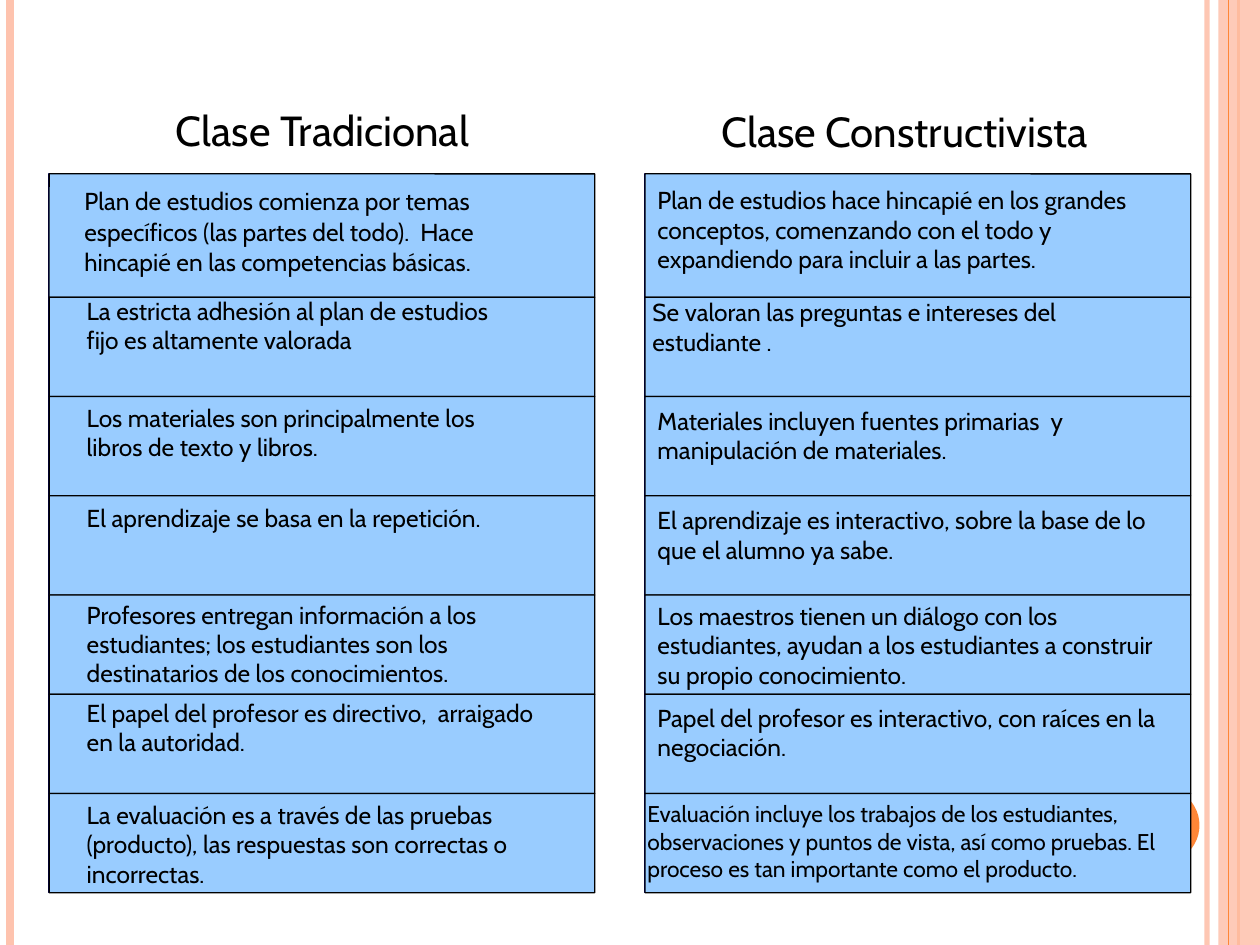
from lxml import etree
from pptx import Presentation
from pptx.dml.color import RGBColor
from pptx.enum.shapes import MSO_CONNECTOR, MSO_SHAPE
from pptx.enum.text import PP_ALIGN
from pptx.oxml.ns import qn
from pptx.util import Pt

LINE = MSO_CONNECTOR.STRAIGHT
RECT, ROUND, OVAL = MSO_SHAPE.RECTANGLE, MSO_SHAPE.ROUNDED_RECTANGLE, MSO_SHAPE.OVAL
CENTER, LEFT = PP_ALIGN.CENTER, PP_ALIGN.LEFT

BLACK = RGBColor(0x00, 0x00, 0x00)
NAVY = RGBColor(0x00, 0x00, 0x80)
SKY = RGBColor(0x99, 0xCC, 0xFF)
PEACH = RGBColor(0xFE, 0xC3, 0xAE)
ORANGE = RGBColor(0xFE, 0x86, 0x37)
FONT = "Cabin"

PX = 9144  # 100 px to the inch
WIDE, HIGH = 1000, 750
TOP, HEAD_H, ROW_H, CELL_W = 138, 98, 78.75, 433

# x, colour, points, opacity in percent
RULES = [(958, PEACH, 3, 93), (8, PEACH, 4.5, 100), (983, ORANGE, 1.5, 100)]
EDGE = (975, ORANGE, 0.75, 100)

# Column left, title and its box, then each row: text, box, and any changes
COLUMNS = [
    (39, "Clase Tradicional", (79, 78, 354, 50), [
        ("Plan de estudios comienza por temas específicos (las partes del todo).  "
         "Hace hincapié en las competencias básicas.",
         (67, 147, 366, 73), {"inset": False, "lead": 1.04}),
        ("La estricta adhesión al plan de estudios fijo es altamente valorada",
         (59, 230, 354, 56), {}),
        ("Los materiales son principalmente los libros de texto y libros.",
         (59, 315, 374, 56), {}),
        ("El aprendizaje se basa en la repetición.", (59, 394, 433, 33), {}),
        ("Profesores entregan información a los estudiantes; los estudiantes son los "
         "destinatarios de los conocimientos.", (59, 471, 374, 80), {}),
        ("El papel del profesor es directivo,  arraigado en la autoridad.",
         (59, 549, 394, 56), {}),
        ("La evaluación es a través de las pruebas (producto), las respuestas son "
         "correctas o incorrectas.", (59, 630, 354, 80), {}),
    ]),
    (512, "Clase Constructivista", (531, 79, 374, 50), [
        ("Plan de estudios hace hincapié en los grandes conceptos, comenzando con el "
         "todo y expandiendo para incluir a las partes.", (512, 142, 413, 84), {}),
        ("Se valoran las preguntas e intereses del estudiante .",
         (508, 231, 417, 76), {}),
        ("Materiales incluyen fuentes primarias  y manipulación de materiales.",
         (512, 317, 413, 76), {}),
        ("El aprendizaje es interactivo, sobre la base de lo que el alumno ya sabe.",
         (512, 396, 433, 56), {}),
        ("Los maestros tienen un diálogo con los estudiantes, ayudan a los estudiantes "
         "a construir su propio conocimiento.", (512, 472, 433, 80), {}),
        ("Papel del profesor es interactivo, con raíces en la negociación.",
         (512, 553, 433, 76), {}),
        ("Evaluación incluye los trabajos de los estudiantes, observaciones y puntos de "
         "vista, así como pruebas. El proceso es tan importante como el producto.",
         (504, 630, 453, 77), {"size": 13}),
    ]),
]


def emu(box):
    return [round(n * PX) for n in box]


def fade(part, alpha):
    """Set the opacity, in percent, of the first colour in an XML part."""
    color = next(part.iter(qn("a:srgbClr")))
    etree.SubElement(color, qn("a:alpha")).set("val", str(alpha * 1000))


def add_rule(x, color, width, alpha):
    rule = shapes.add_connector(LINE, *emu((x, 0, x, HIGH)))
    rule.line.color.rgb = color
    rule.line.width = Pt(width)
    props = rule._element.spPr
    if alpha < 100:
        fade(props, alpha)
    etree.SubElement(props, qn("a:effectLst"))


def add_box(kind, box, fill=None, line=None, adj=None):
    shape = shapes.add_shape(kind, *emu(box))
    shape.shadow.inherit = False
    if fill is None:
        shape.fill.background()
    else:
        shape.fill.solid()
        shape.fill.fore_color.rgb = fill
    if line is None:
        shape.line.fill.background()
    else:
        shape.line.color.rgb = line
        shape.line.width = Pt(0.75)
    if adj is not None:
        shape.adjustments[0] = adj
    return shape


def add_text(text, box, size=14, align=LEFT, gap=8.9, lead=None, inset=True):
    frame = shapes.add_textbox(*emu(box)).text_frame
    frame.word_wrap = True
    side, edge = emu((10, 5)) if inset else (0, 0)
    frame.margin_left = frame.margin_right = side
    frame.margin_top = frame.margin_bottom = edge
    frame.text = text
    para = frame.paragraphs[0]
    para.alignment = align
    para.space_before = para.space_after = Pt(gap)
    if lead:
        para.line_spacing = lead
    font = para.runs[0].font
    font.name, font.size = FONT, Pt(size)
    font.color.rgb = BLACK


deck = Presentation()
deck.slide_width, deck.slide_height = emu((WIDE, HIGH))
shapes = deck.slides.add_slide(deck.slide_layouts[6]).shapes

for rule in RULES:
    add_rule(*rule)
band = add_box(RECT, (967, 0, 33, HIGH), PEACH)
fade(band._element.spPr, 87)
add_rule(*EDGE)
add_box(OVAL, (892, 625, 60, 60), ORANGE)

for left, title, place, rows in COLUMNS:
    full = HEAD_H + ROW_H * (len(rows) - 1)
    add_box(ROUND, (left, TOP, CELL_W, full), line=NAVY, adj=0)
    add_text(title, place, size=24, align=CENTER, gap=0)
    y = TOP
    for i, (text, box, style) in enumerate(rows):
        tall = ROW_H if i else HEAD_H
        add_box(ROUND, (left, y, CELL_W, tall), SKY, BLACK, 0.002)
        add_text(text, box, **style)
        y += tall

deck.save("out.pptx")
